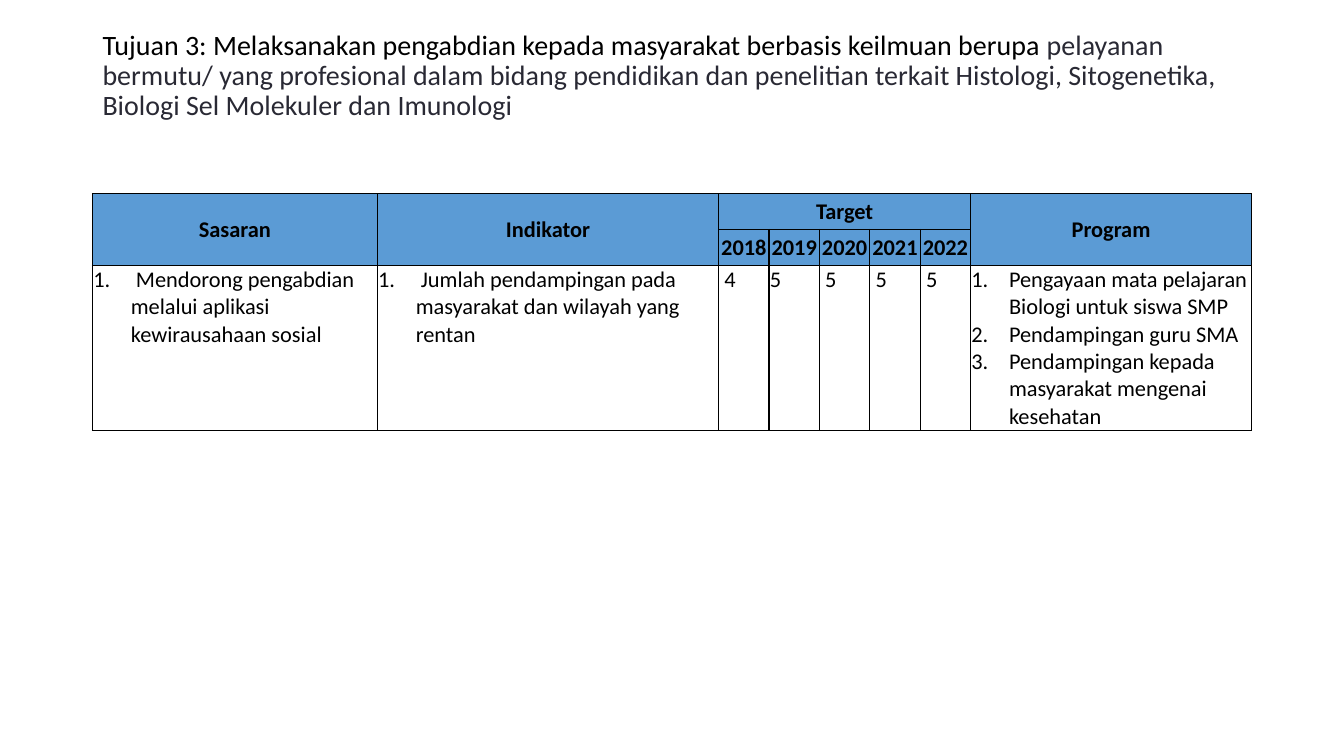
from lxml import etree
from pptx import Presentation
from pptx.dml.color import RGBColor
from pptx.enum import text
from pptx.oxml import ns
from pptx.util import Cm, Pt

BLACK = RGBColor(0x00, 0x00, 0x00)
INK = RGBColor(0x29, 0x29, 0x34)
BLUE = RGBColor(0x5B, 0x9B, 0xD5)
FONT = "Calibri"

COLUMN_WIDTHS = [7.18, 8.6] + [1.27] * 5 + [7.08]
ROW_HEIGHTS = [0.9, 0.9, 4.11]
TITLE = [
    ("Tujuan 3: Melaksanakan pengabdian kepada masyarakat berbasis keilmuan berupa ", BLACK),
    ("pelayanan bermutu/ yang profesional dalam bidang pendidikan dan penelitian "
     "terkait Histologi, Sitogenetika, Biologi Sel Molekuler dan Imunologi", INK),
]
HEADINGS = {0: "Sasaran", 1: "Indikator", 2: "Target", 7: "Program"}
YEARS = ["2018", "2019", "2020", "2021", "2022"]
TARGETS = [" 4", "5 ", " 5", " 5", " 5"]
SASARAN = [" Mendorong pengabdian melalui aplikasi kewirausahaan sosial"]
INDIKATOR = [" Jumlah pendampingan pada masyarakat dan wilayah yang rentan"]
PROGRAM = [
    "Pengayaan mata pelajaran Biologi untuk siswa SMP",
    "Pendampingan guru SMA",
    "Pendampingan kepada masyarakat mengenai kesehatan",
]


def fill_title(title):
    title.left, title.top, title.width, title.height = Cm(2.33), Cm(1.02), Cm(29.21), Cm(1.8)
    frame = title.text_frame
    frame.word_wrap = True
    frame.auto_size = text.MSO_AUTO_SIZE.NONE
    frame.vertical_anchor = text.MSO_ANCHOR.MIDDLE
    para = frame.paragraphs[0]
    para.alignment = text.PP_ALIGN.LEFT
    para.line_spacing = 0.9
    para.font.name, para.font.size = FONT, Pt(20)
    for words, color in TITLE:
        span = para.add_run()
        span.text = words
        span.font.color.rgb = color


def add_borders(cell):
    properties = cell._tc.get_or_add_tcPr()
    for side in ("lnL", "lnR", "lnT", "lnB"):
        line = etree.SubElement(properties, ns.qn(f"a:{side}"), w=str(Pt(1)))
        fill = etree.SubElement(line, ns.qn("a:solidFill"))
        etree.SubElement(fill, ns.qn("a:srgbClr"), val=str(BLACK))


def format_cell(cell, color=None):
    cell.margin_left = cell.margin_right = cell.margin_top = Cm(0.02)
    cell.margin_bottom = 0
    add_borders(cell)
    if color is None:
        cell.fill.background()
    else:
        cell.fill.solid()
        cell.fill.fore_color.rgb = color


def add_number(para):
    properties = para._p.get_or_add_pPr()
    properties.set("marL", str(Cm(0.95)))
    properties.set("indent", str(-Cm(0.95)))
    etree.SubElement(properties, ns.qn("a:buFont"), typeface="+mj-lt")
    etree.SubElement(properties, ns.qn("a:buAutoNum"), type="arabicPeriod")


def write_cell(cell, lines, anchor=text.MSO_ANCHOR.TOP, bold=False, centred=False, numbered=False):
    cell.vertical_anchor = anchor
    cell.text_frame.text = "\n".join(lines)
    for para in cell.text_frame.paragraphs:
        if numbered:
            add_number(para)
        para.alignment = text.PP_ALIGN.CENTER if centred else text.PP_ALIGN.LEFT
        para.font.name, para.font.size = FONT, Pt(16)
        para.font.bold = bold
        para.font.color.rgb = BLACK


def write_heading(cell, words):
    write_cell(cell, [words], text.MSO_ANCHOR.MIDDLE, bold=True, centred=True)


def add_plan_table(page):
    frame = page.shapes.add_table(
        len(ROW_HEIGHTS), len(COLUMN_WIDTHS),
        Cm(2.33), Cm(4.88), Cm(sum(COLUMN_WIDTHS)), Cm(sum(ROW_HEIGHTS)))
    table = frame.table
    table.first_row = table.horz_banding = False
    for column, width in zip(table.columns, COLUMN_WIDTHS):
        column.width = Cm(width)
    for index, (row, height) in enumerate(zip(table.rows, ROW_HEIGHTS)):
        row.height = Cm(height)
        for cell in row.cells:
            format_cell(cell, BLUE if index < 2 else None)

    for column in (0, 1, 7):
        table.cell(0, column).merge(table.cell(1, column))
    table.cell(0, 2).merge(table.cell(0, 6))
    for column, words in HEADINGS.items():
        write_heading(table.cell(0, column), words)
    for column, (year, target) in enumerate(zip(YEARS, TARGETS), start=2):
        write_heading(table.cell(1, column), year)
        write_cell(table.cell(2, column), [target])
    write_cell(table.cell(2, 0), SASARAN, numbered=True)
    write_cell(table.cell(2, 1), INDIKATOR, numbered=True)
    write_cell(table.cell(2, 7), PROGRAM, text.MSO_ANCHOR.BOTTOM, numbered=True)


def main():
    deck = Presentation()
    deck.slide_width, deck.slide_height = Cm(33.87), Cm(19.05)
    page = deck.slides.add_slide(deck.slide_layouts[5])
    fill_title(page.shapes.title)
    add_plan_table(page)
    deck.save("out.pptx")


if __name__ == "__main__":
    main()
